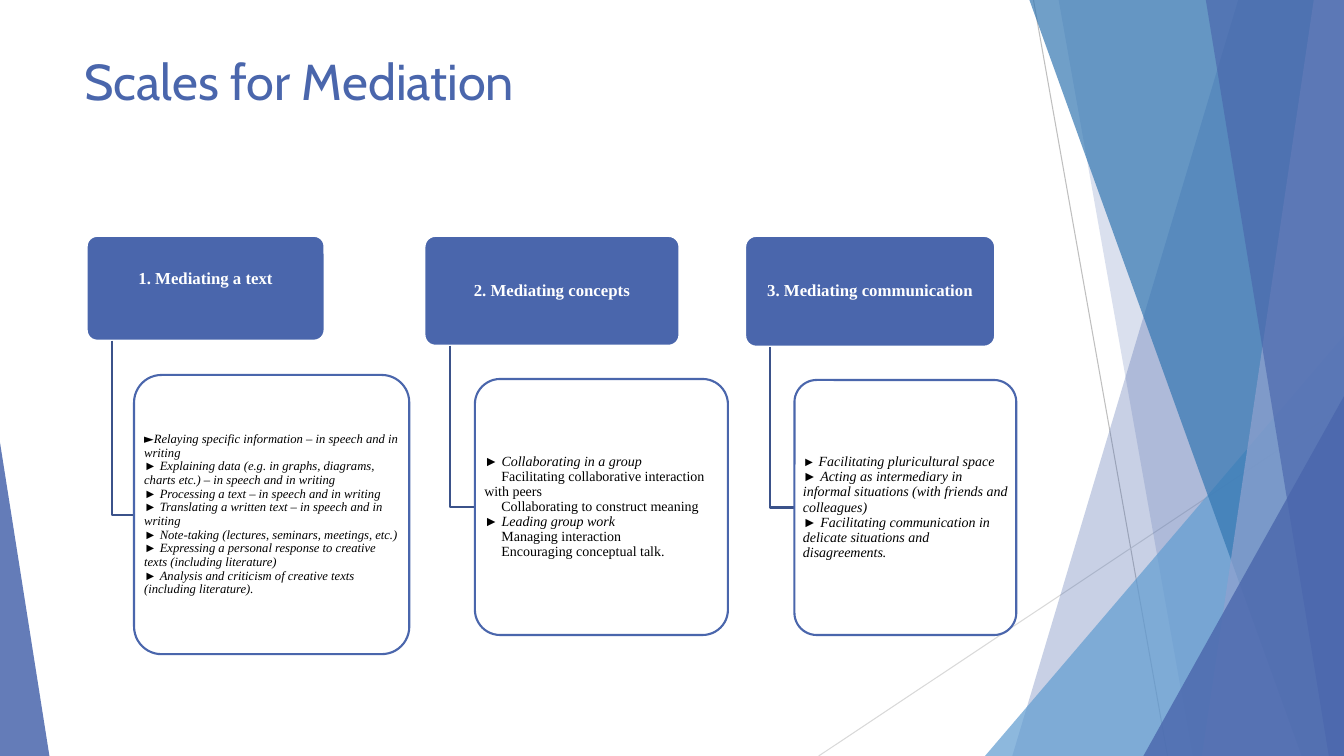
from dataclasses import dataclass

from lxml import etree
from pptx import Presentation
from pptx import util as u
from pptx.dml.color import RGBColor
from pptx.enum import shapes as kinds, text as txt
from pptx.oxml.ns import qn


@dataclass(frozen=True)
class Theme:
    blue: str = "4A66AC"
    navy: str = "3B528A"
    sky: str = "629DD1"
    teal: str = "3477B2"
    haze: str = "90A2CF"
    white: str = "FFFFFF"
    black: str = "000000"
    grey: str = "BFBFBF"
    pale: str = "D9D9D9"
    head: str = "Cabin"
    body: str = "Times New Roman"
    title: float = 36
    label: float = 12
    text: float = 10
    small: float = 9
    thick: float = 1.5
    thin: float = 0.75


@dataclass(frozen=True)
class Box:
    x: float
    y: float
    w: float
    h: float


@dataclass(frozen=True)
class Shard:
    pts: tuple
    color: str
    alpha: int


@dataclass(frozen=True)
class Wedge:
    box: Box
    apex: float
    color: str
    alpha: int


@dataclass(frozen=True)
class Line:
    text: str
    mark: str = "► "  # an empty mark makes an indented sub-item
    face: str = ""
    size: float = 0


@dataclass(frozen=True)
class Column:
    label: str
    top: Box
    card: Box
    size: float
    lines: tuple
    lift: float = 0


T = Theme()
WIDE, HIGH = 13.33, 7.5
STEM = 0.25  # header edge to stem

LINES = [
    ((10.25, 0), (11.58, HIGH), T.grey),
    ((WIDE, 4.03), (8.12, HIGH), T.pale),
]
# Each shard runs from its top left and bottom left corners to the slide edge
DECOR = [
    Shard((12.28, 10.04), T.blue, 30),
    Shard((10.5, 11.83), T.blue, 20),
    Wedge(Box(9.77, 3.33, 3.56, 4.17), 1, T.sky, 72),
    Shard((10.21, 12.91), T.teal, 70),
    Shard((13.03, 11.92), T.haze, 70),
    Shard((11.96, 13.18), T.blue, 65),
    Wedge(Box(11.34, 3.93, 1.99, 3.57), 1, T.blue, 80),
    Wedge(Box(0, 4.39, 0.49, 3.11), 0, T.blue, 85),
]
COLUMNS = [
    Column("1. Mediating a text", Box(0.86, 2.34, 2.36, 1.04), Box(1.33, 3.72, 2.73, 2.77), T.small, (
        Line("Relaying specific information – in speech and in writing", "►", T.head),
        Line("Explaining data (e.g. in graphs, diagrams, charts etc.) – in speech and in writing"),
        Line("Processing a text – in speech and in writing"),
        Line("Translating a written text – in speech and in writing"),
        Line("Note-taking (lectures, seminars, meetings, etc.)"),
        Line("Expressing a personal response to creative texts (including literature)"),
        Line("Analysis and criticism of creative texts (including literature)."),
    ), 0.18),
    Column("2. Mediating concepts", Box(4.21, 2.34, 2.53, 1.09), Box(4.71, 3.76, 2.51, 2.54), T.text, (
        Line("Collaborating in a group"),
        Line("Facilitating collaborative interaction with peers", ""),
        Line("Collaborating to construct meaning", ""),
        Line("Leading group work"),
        Line("Managing interaction", ""),
        Line("Encouraging conceptual talk.", ""),
    )),
    Column("3. Mediating communication", Box(7.39, 2.34, 2.48, 1.1), Box(7.88, 3.77, 2.2, 2.53), T.text, (
        Line("Facilitating pluricultural space", size=T.small),
        Line("Acting as intermediary in informal situations (with friends and colleagues)"),
        Line("Facilitating communication in delicate situations and disagreements."),
    )),
]


def rgb(code: str) -> RGBColor:
    return RGBColor.from_string(code)


def paint(shape, color: str, alpha: int = 100, edge: str = "") -> None:
    shape.shadow.inherit = False
    shape.fill.solid()
    shape.fill.fore_color.rgb = rgb(color)
    if alpha < 100:
        tint = shape.element.spPr.find(qn("a:solidFill"))[0]
        etree.SubElement(tint, qn("a:alpha")).set("val", str(alpha * 1000))
    if edge:
        shape.line.color.rgb = rgb(edge)
        shape.line.width = u.Pt(T.thick)
    else:
        shape.line.fill.background()


def preset(slide, kind, box: Box, adj: float):
    shape = slide.shapes.add_shape(kind, *map(u.Inches, (box.x, box.y, box.w, box.h)))
    shape.adjustments[0] = adj
    return shape


def trace(slide, pts, close: bool):
    first, *rest = [(u.Inches(x), u.Inches(y)) for x, y in pts]
    pen = slide.shapes.build_freeform(*first)
    pen.add_line_segments(rest, close=close)
    return pen.convert_to_shape()


def style(par, face: str, size: float, color: str) -> None:
    par.font.name = face
    par.font.size = u.Pt(size)
    par.font.color.rgb = rgb(color)


def setup(shape, side: float, edge: float, lift: float = 0):
    frame = shape.text_frame
    frame.word_wrap = True
    frame.vertical_anchor = txt.MSO_ANCHOR.MIDDLE
    frame.margin_left = frame.margin_right = u.Inches(side)
    frame.margin_top = u.Inches(edge)
    frame.margin_bottom = u.Inches(edge + lift)
    return frame


def backdrop(slide) -> None:
    for start, end, color in LINES:
        line = slide.shapes.add_connector(
            kinds.MSO_CONNECTOR.STRAIGHT, *map(u.Inches, start + end))
        line.line.color.rgb = rgb(color)
        line.line.width = u.Pt(T.thin)
        etree.SubElement(line.element.spPr, qn("a:effectLst"))
    for part in DECOR:
        if isinstance(part, Shard):
            top, base = part.pts
            shape = trace(slide, [(top, 0), (WIDE, 0), (WIDE, HIGH), (base, HIGH)], True)
        else:
            shape = preset(slide, kinds.MSO_SHAPE.ISOSCELES_TRIANGLE, part.box, part.apex)
        paint(shape, part.color, part.alpha)


def heading(slide, words: str) -> None:
    box = slide.shapes.add_textbox(*map(u.Inches, (0.74, 0.45, 9.66, 0.82)))
    box.text_frame.word_wrap = True
    par = box.text_frame.paragraphs[0]
    par.text = words
    style(par, T.head, T.title, T.blue)


def column(slide, col: Column) -> None:
    # Header
    top = preset(slide, kinds.MSO_SHAPE.ROUNDED_RECTANGLE, col.top, 0.1)
    paint(top, T.blue, edge=T.white)
    par = setup(top, 0.03, 0.02, col.lift).paragraphs[0]
    par.text = col.label
    par.alignment = txt.PP_ALIGN.CENTER
    par.line_spacing = 0.9
    par.font.bold = True
    style(par, T.body, T.label, T.white)

    # Stem from header to card
    x, mid = col.top.x + STEM, col.card.y + col.card.h / 2
    stem = trace(slide, [(x, col.top.y + col.top.h), (x, mid), (col.card.x, mid)], False)
    paint(stem, T.white, edge=T.navy)
    stem.fill.background()

    # Card with its list
    card = preset(slide, kinds.MSO_SHAPE.ROUNDED_RECTANGLE, col.card, 0.1)
    paint(card, T.white, 90, T.blue)
    frame = setup(card, 0.02, 0.01)
    for i, item in enumerate(col.lines):
        par = frame.add_paragraph() if i else frame.paragraphs[0]
        par.alignment = txt.PP_ALIGN.LEFT
        par.line_spacing = 0.9
        style(par, T.body, col.size, T.black)
        if item.mark:
            mark = par.add_run()
            mark.text = item.mark
            mark.font.bold = True
            if item.face:
                mark.font.name = item.face
            if item.size:
                mark.font.size = u.Pt(item.size)
        else:
            par._p.get_or_add_pPr().set("indent", str(u.Inches(0.17)))
        run = par.add_run()
        run.text = item.text
        run.font.italic = bool(item.mark)


def main() -> None:
    deck = Presentation()
    deck.slide_width, deck.slide_height = u.Inches(WIDE), u.Inches(HIGH)
    slide = deck.slides.add_slide(deck.slide_layouts[6])
    backdrop(slide)
    heading(slide, "Scales for Mediation")
    for col in COLUMNS:
        column(slide, col)
    deck.save("out.pptx")


if __name__ == "__main__":
    main()
